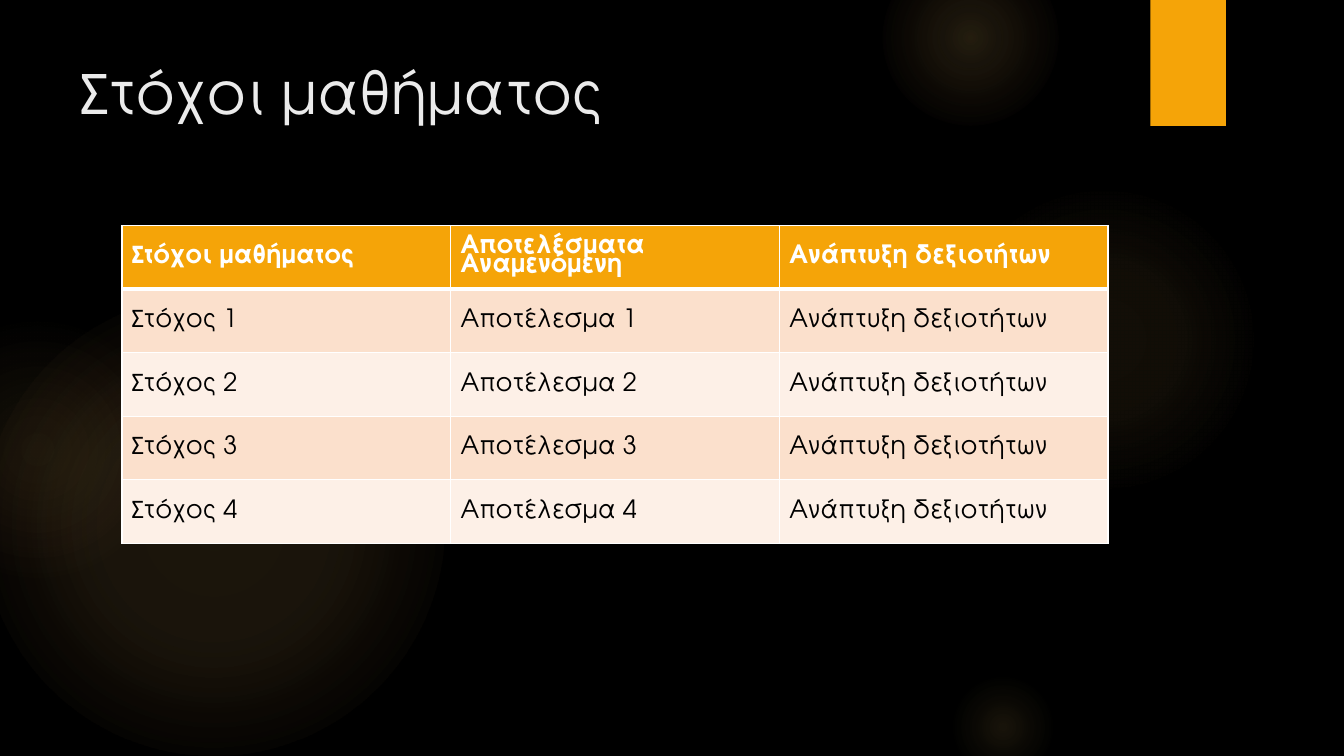
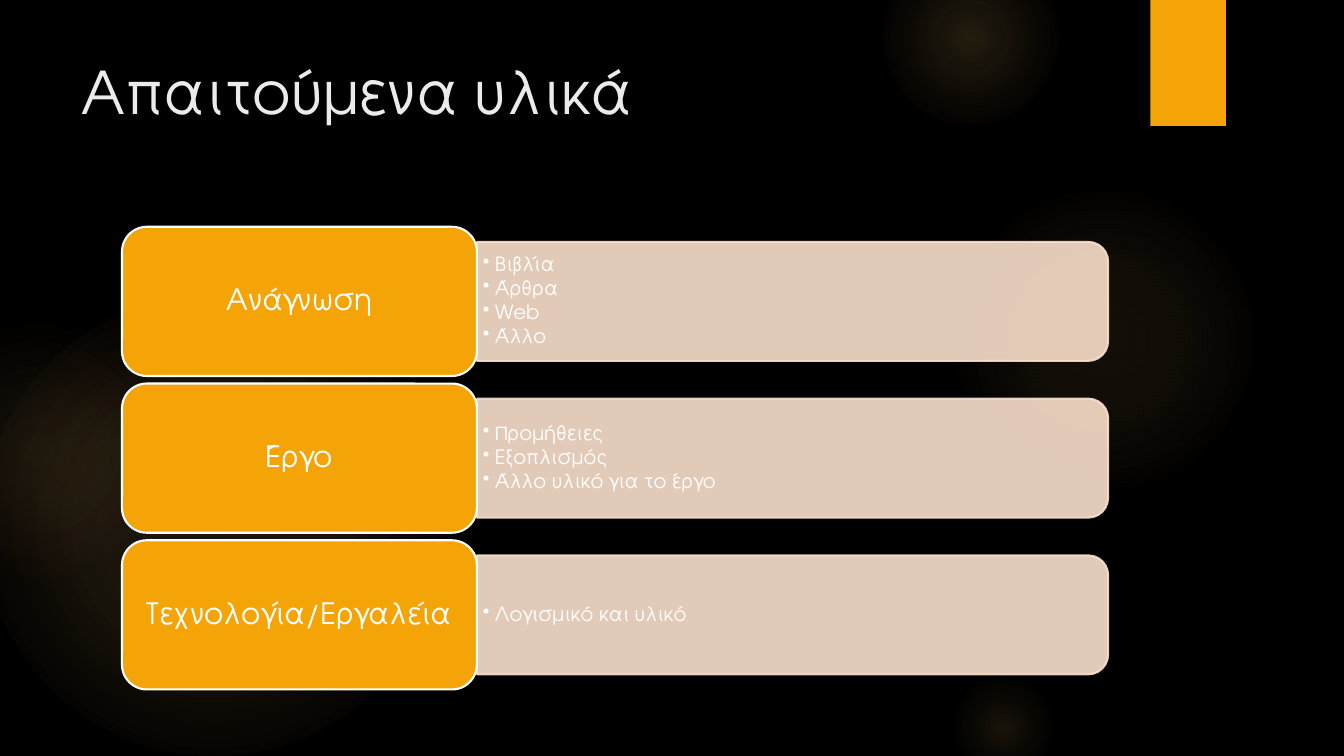
import pptx
import pptx.chart
import pptx.dml.color
import pptx.enum.shapes
import pptx.enum.text
import pptx.oxml
import pptx.oxml.ns
import pptx.util

Inches, Pt = pptx.util.Inches, pptx.util.Pt
RGBColor = pptx.dml.color.RGBColor
MSO_SHAPE = pptx.enum.shapes.MSO_SHAPE
MSO_ANCHOR = pptx.enum.text.MSO_ANCHOR
PP_ALIGN = pptx.enum.text.PP_ALIGN
NS = pptx.oxml.ns.nsdecls("a")

BLACK = RGBColor(0x00, 0x00, 0x00)
WHITE = RGBColor(0xFF, 0xFF, 0xFF)
TITLE_GRAY = RGBColor(0xEB, 0xEB, 0xEB)
ORANGE = RGBColor(0xF5, 0xA4, 0x08)
PEACH = RGBColor(0xFB, 0xE0, 0xCC)
PALE_PEACH = RGBColor(0xFD, 0xF0, 0xE7)
GLOW = RGBColor(0xFA, 0xC9, 0x6A)
CORAL = RGBColor(0xF5, 0x9B, 0x74)
FONT = "TeX Gyre Adventor"


def put_text(p, text, color, size, bold=False, **para_format):
    r = p.add_run()
    r.text = text
    for name, value in {"name": FONT, "size": Pt(size), "bold": bold}.items():
        setattr(r.font, name, value)
    r.font.color.rgb = color
    for name, value in para_format.items():
        setattr(p, name, value)


def add_shape(s, kind, box, fill=None, line=None):
    sp = s.shapes.add_shape(kind, *[Inches(v) for v in box])
    sp.shadow.inherit = False
    if fill is not None:
        sp.fill.solid()
        sp.fill.fore_color.rgb = fill
    if line is None:
        sp.line.fill.background()
    else:
        sp.line.color.rgb = line
        sp.line.width = Pt(1.5)
    return sp


prs = pptx.Presentation()
prs.slide_width, prs.slide_height = Inches(13.33), Inches(7.5)

# Shared layout: background and title position
layout = prs.slide_layouts[5]
layout.background.fill.solid()
layout.background.fill.fore_color.rgb = BLACK
title_box = {"left": 0.71, "top": 0.5, "width": 10.29, "height": 1.53}
for name, value in title_box.items():
    setattr(layout.placeholders[0], name, Inches(value))

# Slides with their titles
slides = []
for title in ["Στόχοι μαθήματος", "Απαιτούμενα υλικά"]:
    s = prs.slides.add_slide(layout)
    tf = s.shapes.title.text_frame
    tf.vertical_anchor = MSO_ANCHOR.TOP
    put_text(tf.paragraphs[0], title, TITLE_GRAY, 42, alignment=PP_ALIGN.LEFT)
    slides.append(s)
goals, materials = slides

# Shared decoration: glowing circles (left, top, diameter, stops) and a tab
glows = [
    (-0.17, 2.92, 4.58, [(0, GLOW, 11), (36, GLOW, 10), (75, GLOW, 0)]),
    (-0.92, 3.17, 2.58, [(0, GLOW, 8), (36, GLOW, 5), (71, CORAL, 0)]),
    (9.41, 1.83, 3.08, [(0, GLOW, 7), (36, GLOW, 6), (69, GLOW, 0)]),
    (8.75, -0.5, 1.75, [(0, GLOW, 14), (36, GLOW, 7), (73, GLOW, 0)]),
    (9.41, 6.67, 1.08, [(0, GLOW, 10), (31, GLOW, 5), (66, GLOW, 0)]),
]
decoration = []
for left, top, size, stops in glows:
    sp = add_shape(goals, MSO_SHAPE.OVAL, (left, top, size, size))
    gs = "".join(
        f'<a:gs pos="{pos * 1000}"><a:srgbClr val="{color}">'
        f'<a:alpha val="{alpha * 1000}"/></a:srgbClr></a:gs>'
        for pos, color, alpha in stops)
    sp.element.spPr.insert(2, pptx.oxml.parse_xml(
        f'<a:gradFill {NS}><a:gsLst>{gs}</a:gsLst><a:path path="circle">'
        '<a:fillToRect l="50000" t="50000" r="50000" b="50000"/>'
        '</a:path></a:gradFill>'))
    decoration.append(sp)
decoration.append(
    add_shape(goals, MSO_SHAPE.RECTANGLE, (11.41, 0, 0.75, 1.25), ORANGE))

# Move the decoration to the layout, behind the placeholders
for i, sp in enumerate(decoration):
    sp.element.nvSpPr.cNvPr.set("id", str(20 + i))
    layout.shapes.element.insert(2 + i, sp.element)

# Table of goals
rows = [("Στόχοι μαθήματος", "Αποτελέσματα Αναμενόμενη", "Ανάπτυξη δεξιοτήτων")]
rows += [(f"Στόχος {n}", f"Αποτέλεσμα {n}", "Ανάπτυξη δεξιοτήτων")
         for n in range(1, 5)]
table = goals.shapes.add_table(
    len(rows), 3, Inches(1.21), Inches(2.24),
    Inches(3 * 3.26), Inches(len(rows) * 0.63)).table
for i, row in enumerate(rows):
    header = i == 0
    fill = ORANGE if header else PEACH if i % 2 else PALE_PEACH
    borders = {"L": 1, "R": 1, "T": 3 if i == 1 else 1, "B": 3 if header else 1}
    for j, text in enumerate(row):
        cell = table.cell(i, j)
        cell.vertical_anchor = MSO_ANCHOR.MIDDLE
        tcPr = cell._tc.get_or_add_tcPr()
        for side, width in borders.items():
            tcPr.append(pptx.oxml.parse_xml(
                f'<a:ln{side} {NS} w="{Pt(width)}"><a:solidFill>'
                f'<a:srgbClr val="{WHITE}"/></a:solidFill></a:ln{side}>'))
        cell.fill.solid()
        cell.fill.fore_color.rgb = fill
        put_text(cell.text_frame.paragraphs[0], text,
                 WHITE if header else BLACK, 18, bold=header,
                 line_spacing=0.8 if header else 1.0)

# Blocks of materials: a label on the left, a bar with bullets on the right
blocks = [
    ("Ανάγνωση", ["Βιβλία", "Άρθρα", "Web", "Άλλο"]),
    ("Έργο", ["Προμήθειες", "Εξοπλισμός", "Άλλο υλικό για το έργο"]),
    ("Τεχνολογία/Εργαλεία", ["Λογισμικό και υλικό"]),
]
label_w, label_h, pitch = 3.52, 1.48, 1.555
bar_left, bar_w, bar_h = 4.73, 6.26, 1.18
for i, (label, items) in enumerate(blocks):
    top = 2.25 + i * pitch
    middle = top + label_h / 2

    # Bar, turned so that its rounded corners face right
    bar = add_shape(
        materials, MSO_SHAPE.ROUND_2_SAME_RECTANGLE,
        (bar_left + (bar_w - bar_h) / 2, middle - bar_w / 2, bar_h, bar_w),
        PEACH, PEACH)
    bar.rotation = 90
    for color in bar.element.spPr.iter(pptx.oxml.ns.qn("a:srgbClr")):
        color.append(pptx.oxml.parse_xml(f'<a:alpha {NS} val="90000"/>'))

    # Bullets
    tf = materials.shapes.add_textbox(
        Inches(bar_left), Inches(middle - 0.535), Inches(6.2), Inches(1.07)).text_frame
    frame_format = {
        "word_wrap": True, "vertical_anchor": MSO_ANCHOR.MIDDLE,
        "margin_left": Inches(0.06), "margin_right": Inches(0.06),
        "margin_top": Inches(0.03), "margin_bottom": Inches(0.03)}
    for name, value in frame_format.items():
        setattr(tf, name, value)
    for k, item in enumerate(items):
        p = tf.add_paragraph() if k else tf.paragraphs[0]
        put_text(p, item, WHITE, 14, level=1, line_spacing=0.9, space_after=Pt(2))
        pPr = p._p.get_or_add_pPr()
        pPr.set("marL", str(Inches(0.12)))
        pPr.set("indent", str(-Inches(0.12)))
        pPr.append(pptx.oxml.parse_xml(f'<a:buChar {NS} char="•"/>'))

    # Label
    sp = add_shape(materials, MSO_SHAPE.ROUNDED_RECTANGLE,
                   (1.21, top, label_w, label_h), ORANGE, WHITE)
    tf = sp.text_frame
    label_format = {
        "word_wrap": True, "vertical_anchor": MSO_ANCHOR.MIDDLE,
        "margin_left": Inches(0.09), "margin_right": Inches(0.09),
        "margin_top": Inches(0.04), "margin_bottom": Inches(0.04)}
    for name, value in label_format.items():
        setattr(tf, name, value)
    put_text(tf.paragraphs[0], label, WHITE, 21,
             alignment=PP_ALIGN.CENTER, line_spacing=0.9)

prs.save("out.pptx")
